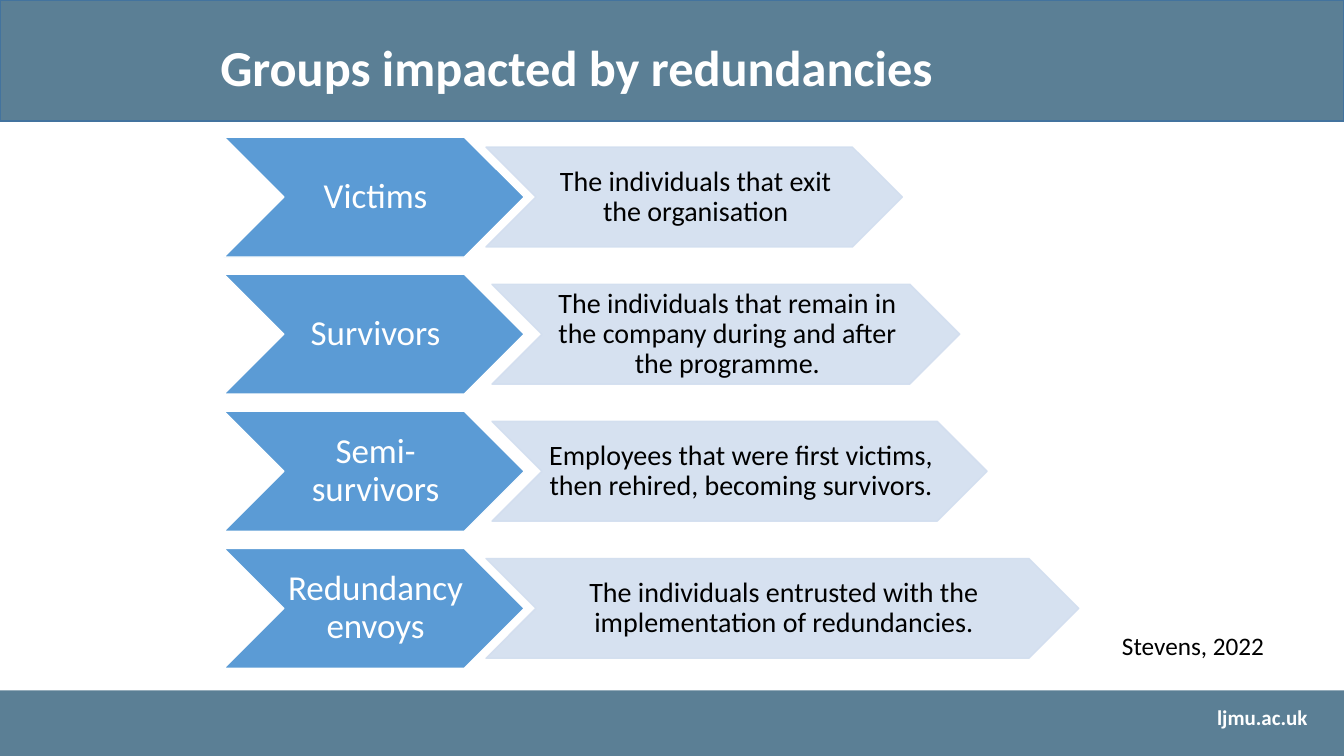
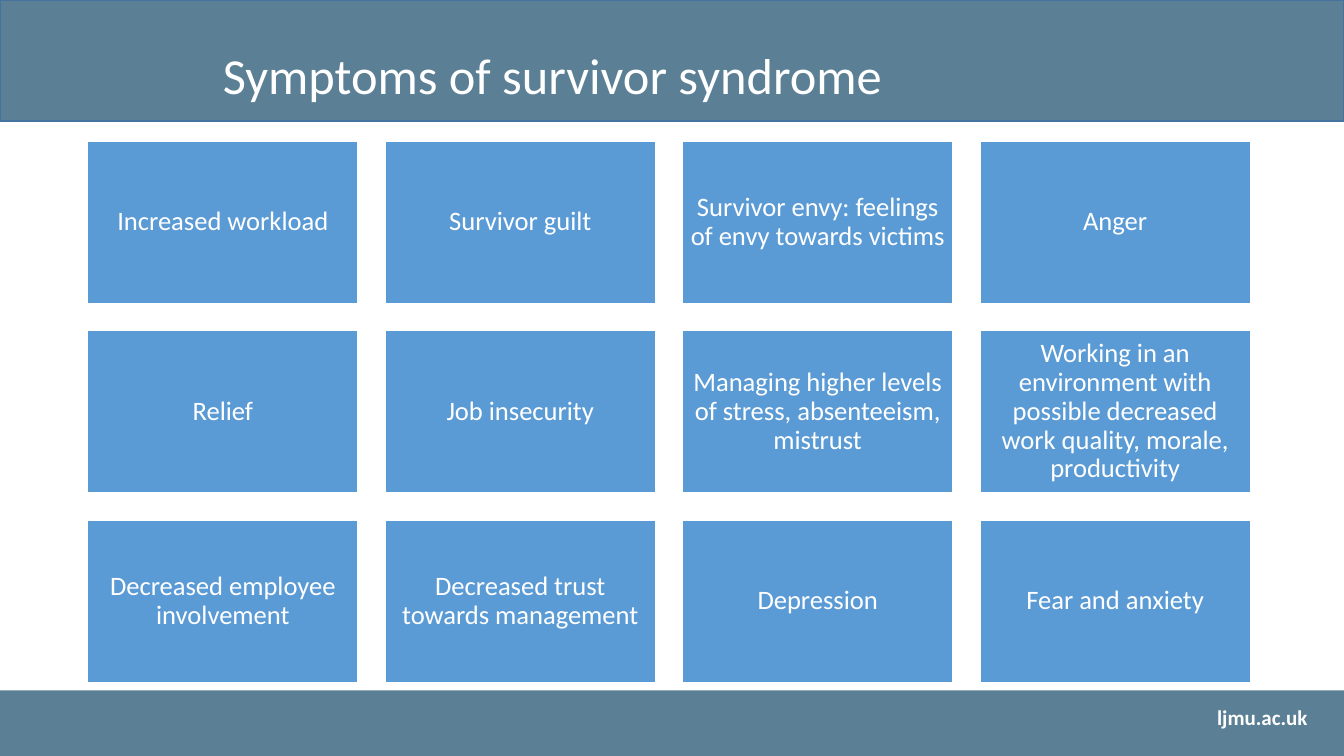
from lxml.etree import SubElement
from pptx import Presentation
from pptx.dml.color import RGBColor
from pptx.enum.shapes import MSO_SHAPE
from pptx.enum.text import MSO_ANCHOR, MSO_AUTO_SIZE, PP_ALIGN
from pptx.oxml.ns import qn
from pptx.util import Inches, Pt

FONT = "Calibri"
SLATE, SLATE_EDGE = "5B7F95", "43739E"
BLUE, PALE = "5B9BD5", "D2DEEF"
WHITE, BLACK = "FFFFFF", "000000"
WIDTH, HEIGHT = 13.33, 7.5

GROUPS = [
    ("Victims", "The individuals that exit the organisation", 4.82, 4.13),
    ("Survivors", "The individuals that remain in the company during and after "
     "the programme.", 4.88, 4.64),
    ("Semi-survivors", "Employees that were first victims, then rehired, "
     "becoming survivors.", 4.88, 4.91),
    ("Redundancy envoys", "The individuals entrusted with the implementation of "
     "redundancies.", 4.82, 5.88),
]
SYMPTOMS = [
    "Increased workload", "Survivor guilt",
    "Survivor envy: feelings of envy towards victims", "Anger",
    "Relief", "Job insecurity",
    "Managing higher levels of stress, absenteeism, mistrust",
    "Working in an environment with possible decreased work quality, morale, "
    "productivity",
    "Decreased employee involvement", "Decreased trust towards management",
    "Depression", "Fear and anxiety",
]


def rgb(color):
    return RGBColor.from_string(color)


class Deck:
    """Holds the shared style and the slide being built."""

    def __init__(self):
        self.prs = Presentation()
        self.prs.slide_width = Inches(WIDTH)
        self.prs.slide_height = Inches(HEIGHT)
        self.s = None

    def set_text(self, tf, text, size, color, bold=False, align=PP_ALIGN.CENTER,
                 spacing=0.9):
        tf.text = text
        p = tf.paragraphs[0]
        p.alignment = align
        p.line_spacing = spacing
        p.font.name = FONT
        p.font.size = Pt(size)
        p.font.bold = bold
        p.font.color.rgb = rgb(color)

    def shape(self, kind, left, top, width, height, fill, line=None, opacity=None):
        sp = self.s.shapes.add_shape(
            kind, Inches(left), Inches(top), Inches(width), Inches(height))
        sp.shadow.inherit = False
        sp.fill.solid()
        sp.fill.fore_color.rgb = rgb(fill)
        if line:
            sp.line.color.rgb = rgb(line)
            sp.line.width = Pt(1)
        else:
            sp.line.fill.background()
        if opacity:
            for clr in sp._element.spPr.iter(qn("a:srgbClr")):
                SubElement(clr, qn("a:alpha"), val=str(opacity * 1000))
        return sp

    def label(self, sp, text, size, color, insets):
        tf = sp.text_frame
        tf.word_wrap = True
        tf.vertical_anchor = MSO_ANCHOR.MIDDLE
        (tf.margin_left, tf.margin_top,
         tf.margin_right, tf.margin_bottom) = map(Inches, insets)
        self.set_text(tf, text, size, color)

    def text(self, text, left, top, width, height, size, color, wrap=True, **style):
        tb = self.s.shapes.add_textbox(
            Inches(left), Inches(top), Inches(width), Inches(height))
        tb.text_frame.word_wrap = wrap
        self.set_text(tb.text_frame, text, size, color, spacing=1.0, **style)

    def slide(self, title, left, top, **style):
        self.s = self.prs.slides.add_slide(self.prs.slide_layouts[5])
        self.shape(MSO_SHAPE.RECTANGLE, 0, 0, WIDTH, 1.2, SLATE, SLATE_EDGE)
        self.shape(MSO_SHAPE.RECTANGLE, 0, 6.85, WIDTH, 0.65, SLATE)
        self.text("ljmu.ac.uk", 11.69, 6.94, 1.66, 0.35, 15, WHITE, bold=True)
        sp = self.s.shapes.title
        self.s.shapes._spTree.append(sp._element)
        sp.left, sp.top = Inches(left), Inches(top)
        sp.width, sp.height = Inches(11.44), Inches(0.81)
        sp.text_frame.auto_size = MSO_AUTO_SIZE.NONE
        sp.text_frame.vertical_anchor = MSO_ANCHOR.TOP
        self.set_text(sp.text_frame, title, 36, WHITE, **style)

    def group_row(self, top, name, meaning, left, width):
        sp = self.shape(MSO_SHAPE.CHEVRON, 2.22, top, 2.98, 1.19, BLUE, WHITE)
        self.label(sp, name, 25, WHITE, (0.03, 0.02, 0, 0.02))
        sp = self.shape(MSO_SHAPE.CHEVRON, left, top + 0.1, width, 0.99,
                        PALE, PALE, opacity=90)
        self.label(sp, meaning, 20, BLACK, (0.03, 0.01, 0, 0.01))

    def card_grid(self, cards, columns, left, top, width, height, gap):
        for i, card in enumerate(cards):
            row, col = divmod(i, columns)
            sp = self.shape(MSO_SHAPE.RECTANGLE, left + col * (width + gap),
                            top + row * (height + gap), width, height, BLUE, WHITE)
            self.label(sp, card, 19, WHITE, (0.08,) * 4)


def main():
    deck = Deck()

    deck.slide("Groups impacted by redundancies", 0, 0.38, bold=True)
    for i, group in enumerate(GROUPS):
        deck.group_row(1.36 * (i + 1), *group)
    deck.text("Stevens, 2022", 11.03, 6.2, 1.63, 0.4, 18, BLACK,
              wrap=False, align=PP_ALIGN.LEFT)

    deck.slide("Symptoms of survivor syndrome", 2.11, 0.46, align=PP_ALIGN.LEFT)
    deck.card_grid(SYMPTOMS, 4, 0.87, 1.4, 2.68, 1.61, 0.27)

    deck.prs.save("out.pptx")


if __name__ == "__main__":
    main()
